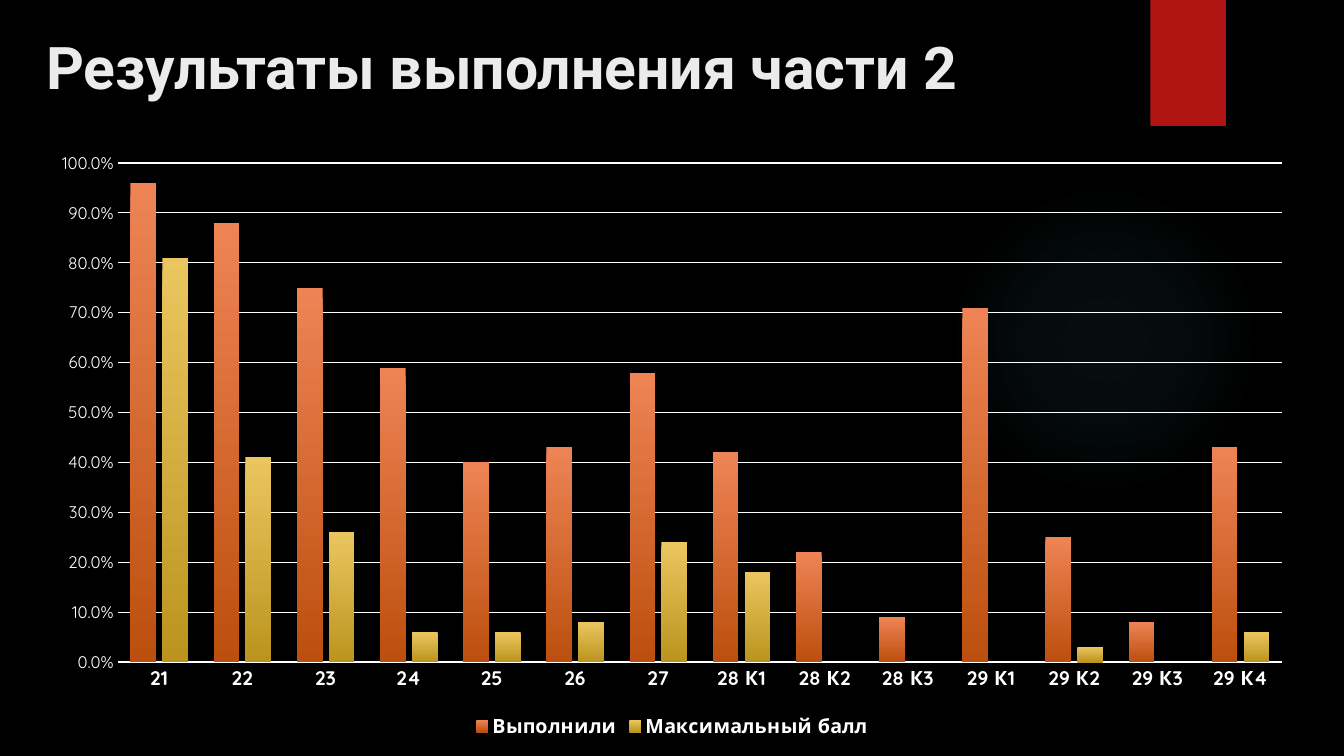
import pptx
import pptx.chart.data
import pptx.dml.color
import pptx.enum.chart
import pptx.enum.shapes
import pptx.enum.text
import pptx.oxml
import pptx.oxml.ns
import pptx.util

Inches = pptx.util.Inches
Pt = pptx.util.Pt
NS = pptx.oxml.ns.nsdecls("a", "c")

TASKS = ["21", "22", "23", "24", "25", "26", "27", "28 К1", "28 К2", "28 К3",
         "29 К1", "29 К2", "29 К3", "29 К4"]
# name, values, top colour, bottom colour
SERIES = [
    ("Выполнили",
     [0.96, 0.88, 0.75, 0.59, 0.4, 0.43, 0.58, 0.42, 0.22, 0.09, 0.71, 0.25, 0.08, 0.43],
     "EE8455", "BC4F0E"),
    ("Максимальный балл",
     [0.81, 0.41, 0.26, 0.06, 0.06, 0.08, 0.24, 0.18, None, None, None, 0.03, None, 0.06],
     "EBC65F", "BB941F"),
]


def rgb(code):
    return pptx.dml.color.RGBColor.from_string(code)


class Deck:
    light = "FFFFFF"
    face = "Quicksand"

    def __init__(self, width, height):
        self.prs = pptx.Presentation()
        self.prs.slide_width = Inches(width)
        self.prs.slide_height = Inches(height)
        self.slide = self.prs.slides.add_slide(self.prs.slide_layouts[6])

    def ground(self, color):
        fill = self.slide.background.fill
        fill.solid()
        fill.fore_color.rgb = rgb(color)

    def shape(self, kind, box, color):
        item = self.slide.shapes.add_shape(kind, *map(Inches, box))
        item.shadow.inherit = False
        item.line.fill.background()
        item.fill.solid()
        item.fill.fore_color.rgb = rgb(color)
        return item

    def glow(self, box, color, stops):
        item = self.shape(pptx.enum.shapes.MSO_SHAPE.OVAL, box, color)
        marks = "".join(
            f'<a:gs pos="{pos * 1000}"><a:srgbClr val="{color}">'
            f'<a:alpha val="{alpha * 1000}"/></a:srgbClr></a:gs>'
            for pos, alpha in stops)
        grad = pptx.oxml.parse_xml(
            f'<a:gradFill {NS}><a:gsLst>{marks}</a:gsLst><a:path path="circle">'
            '<a:fillToRect l="50000" t="50000" r="50000" b="50000"/></a:path></a:gradFill>')
        props = item.element.spPr
        props.replace(props.find(pptx.oxml.ns.qn("a:solidFill")), grad)

    def text(self, box, words, size, color, face):
        frame = self.slide.shapes.add_textbox(*map(Inches, box)).text_frame
        frame.word_wrap = True
        frame.vertical_anchor = pptx.enum.text.MSO_ANCHOR.MIDDLE
        para = frame.paragraphs[0]
        para.text = words
        self.style(para.font, size, True, color, face)

    def style(self, font, size, bold=False, color=light, face=face):
        font.size = Pt(size)
        font.bold = bold
        font.name = face
        font.color.rgb = rgb(color)

    def chart(self, box, cats, series, area):
        enum = pptx.enum.chart
        data = pptx.chart.data.CategoryChartData(number_format="0.0%")
        data.categories = cats
        for name, vals, *_ in series:
            data.add_series(name, vals)
        chart = self.slide.shapes.add_chart(
            enum.XL_CHART_TYPE.COLUMN_CLUSTERED, *map(Inches, box), data).chart
        chart.has_title = False
        self.style(chart.font, 10)

        # Bars
        plot = chart.plots[0]
        plot.gap_width = 100
        plot.overlap = -24
        plot.vary_by_categories = False
        for bars, (_, _, *colors) in zip(plot.series, series):
            fill = bars.format.fill
            fill.gradient()
            fill.gradient_angle = 270
            for stop, pos, color in zip(fill.gradient_stops, (0, 1), colors):
                stop.position = pos
                stop.color.rgb = rgb(color)

        # Axes
        cat, val = chart.category_axis, chart.value_axis
        for axis, size, bold in ((cat, 14, True), (val, 12, False)):
            axis.major_tick_mark = axis.minor_tick_mark = enum.XL_TICK_MARK.NONE
            self.style(axis.tick_labels.font, size, bold)
        val.minimum_scale, val.maximum_scale, val.major_unit = 0, 1, 0.1
        val.tick_labels.number_format = "0.0%"
        val.tick_labels.number_format_is_linked = False
        val.format.line.fill.background()
        val.has_major_gridlines = True
        for line, width in ((cat.format.line, 1), (val.major_gridlines.format.line, 0.75)):
            line.color.rgb = rgb(self.light)
            line.width = Pt(width)

        # Legend
        chart.has_legend = True
        chart.legend.position = enum.XL_LEGEND_POSITION.BOTTOM
        chart.legend.include_in_layout = False
        self.style(chart.legend.font, 14, True)

        # Plot area, as shares of the chart frame
        spot = "".join(f'<c:{key} val="{part}"/>' for key, part in zip("xywh", area))
        layout = pptx.oxml.parse_xml(
            f'<c:layout {NS}><c:manualLayout><c:layoutTarget val="inner"/>'
            f'<c:xMode val="edge"/><c:yMode val="edge"/>{spot}</c:manualLayout></c:layout>')
        room = chart.element.find(".//" + pptx.oxml.ns.qn("c:plotArea"))
        for old in room.findall(pptx.oxml.ns.qn("c:layout")):
            room.remove(old)
        room.insert(0, layout)


def main():
    deck = Deck(13.33, 7.5)
    # Backdrop
    deck.ground("000000")
    deck.glow((9.41, 1.83, 3.08, 3.08), "50B9C1", ((0, 7), (36, 6), (69, 0)))
    deck.shape(pptx.enum.shapes.MSO_SHAPE.RECTANGLE, (11.41, 0, 0.75, 1.25), "B01513")
    # Title
    deck.text((0.36, 0.2, 11.03, 0.91), "Результаты выполнения части 2", 42, "EBEBEB", "Roboto")
    # Results by task
    deck.chart((0.36, 1.39, 12.61, 5.98), TASKS, SERIES, (0.064, 0.038, 0.916, 0.828))
    deck.prs.save("out.pptx")


if __name__ == "__main__":
    main()
